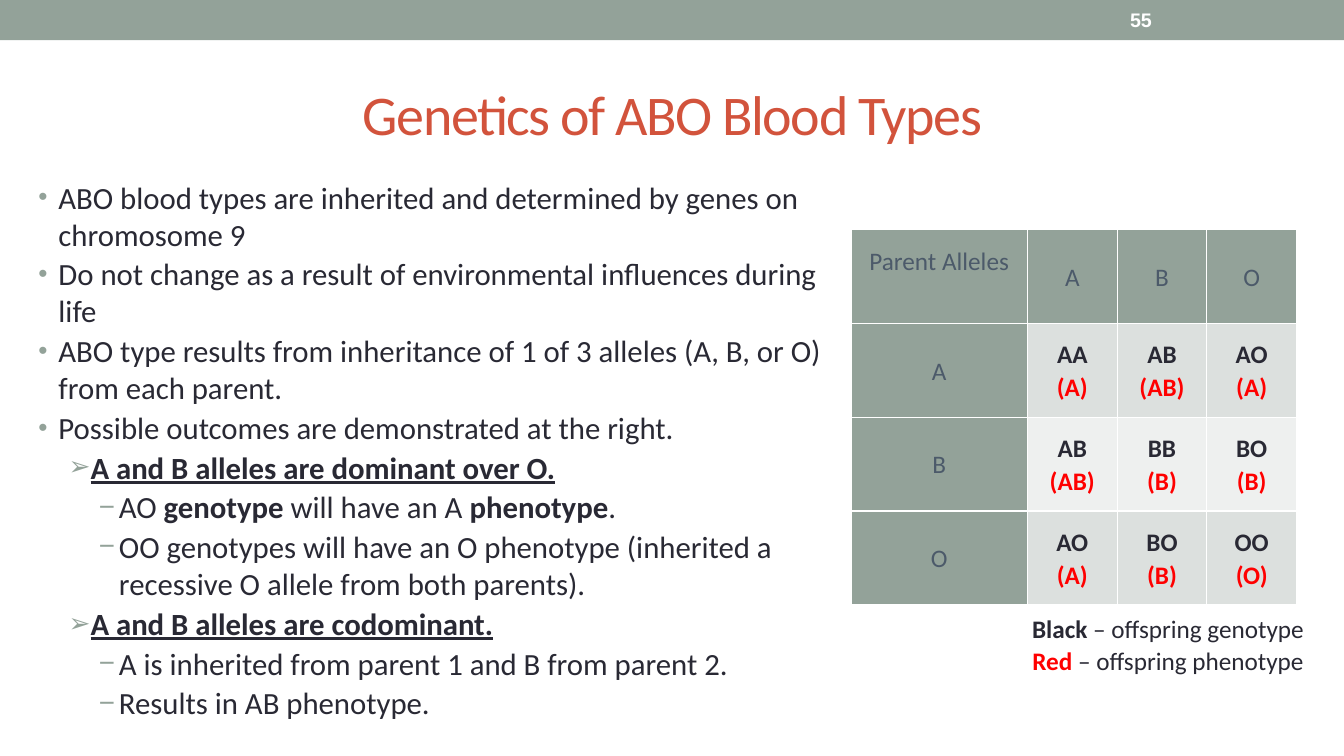
from lxml import etree
from pptx import Presentation
from pptx.dml.color import RGBColor
from pptx.enum.shapes import MSO_SHAPE
from pptx.enum.text import MSO_ANCHOR, MSO_AUTO_SIZE, PP_ALIGN
from pptx.oxml.ns import qn
from pptx.util import Inches, Pt

RECTANGLE = MSO_SHAPE.RECTANGLE
TOP, MIDDLE = MSO_ANCHOR.TOP, MSO_ANCHOR.MIDDLE
NO_AUTOFIT = MSO_AUTO_SIZE.NONE
LEFT, CENTER = PP_ALIGN.LEFT, PP_ALIGN.CENTER

SAGE = RGBColor(0x93, 0xA2, 0x99)
RUST = RGBColor(0xD2, 0x53, 0x3C)
INK = RGBColor(0x29, 0x29, 0x34)
SLATE = RGBColor(0x4C, 0x5A, 0x6A)
RED = RGBColor(0xFF, 0x00, 0x00)
WHITE = RGBColor(0xFF, 0xFF, 0xFF)
BANDS = [RGBColor(0xDC, 0xE0, 0xDE), RGBColor(0xEE, 0xF0, 0xEF)]

# Content
TITLE = "Genetics of ABO Blood Types"
SLIDE_NUMBER = "55"
# (level, [(text, bold), ...])
BODY = [
    (0, [("ABO blood types are inherited and determined by genes on chromosome 9", False)]),
    (0, [("Do not change as a result of environmental influences during life", False)]),
    (0, [("ABO type results from inheritance of 1 of 3 alleles (A, B, or O) from each parent.", False)]),
    (0, [("Possible outcomes are demonstrated at the right.", False)]),
    (1, [("A and B alleles are dominant over O.", True)]),
    (2, [("AO ", False), ("genotype", True), (" will have an A ", False),
         ("phenotype", True), (".", False)]),
    (2, [("OO genotypes will have an O phenotype (inherited a recessive O allele "
          "from both parents).", False)]),
    (1, [("A and B alleles are codominant.", True)]),
    (2, [("A is inherited from parent 1 and B from parent 2.", False)]),
    (2, [("Results in AB phenotype.", False)]),
]
BULLETS = [("•", 85), ("➢", 85), ("−", 90)]  # character and size percent by level
CORNER = "Parent Alleles"
ALLELES = ["A", "B", "O"]
LEGEND = [
    [("Black", True, INK), (" – offspring genotype", False, INK)],
    [("Red", True, RED), (" – offspring phenotype", False, INK)],
]


def place(shape, left, top, width, height):
    shape.left, shape.top = Inches(left), Inches(top)
    shape.width, shape.height = Inches(width), Inches(height)


def style(run, size, color, bold=False, name="Calibri"):
    run.font.name, run.font.size = name, Pt(size)
    run.font.bold, run.font.color.rgb = bold, color


def add_run(paragraph, text, *formatting):
    run = paragraph.add_run()
    run.text = text
    style(run, *formatting)
    return run


def paragraph_at(text_frame, index):
    return text_frame.add_paragraph() if index else text_frame.paragraphs[0]


def add_bullet(paragraph, level):
    character, percent = BULLETS[level]
    properties = paragraph._p.get_or_add_pPr()
    properties.set("marL", str(Inches(0.2 + 0.3 * level)))
    properties.set("indent", str(Inches(-0.2)))
    color = etree.SubElement(properties, qn("a:buClr"))
    etree.SubElement(color, qn("a:srgbClr"), val=str(SAGE))
    etree.SubElement(properties, qn("a:buSzPct"), val=str(percent * 1000))
    etree.SubElement(properties, qn("a:buFont"), typeface="Arial")
    etree.SubElement(properties, qn("a:buChar"), char=character)


def add_borders(cell):
    properties = cell._tc.get_or_add_tcPr()
    for side in ("L", "R", "T", "B"):
        line = etree.SubElement(properties, qn(f"a:ln{side}"), w=str(Pt(1)))
        fill = etree.SubElement(line, qn("a:solidFill"))
        etree.SubElement(fill, qn("a:srgbClr"), val=str(WHITE))


def fill_cell(cell, text, fill, colors, bold):
    add_borders(cell)
    cell.fill.solid()
    cell.fill.fore_color.rgb = fill
    cell.vertical_anchor = MIDDLE
    cell.margin_left = cell.margin_right = Inches(0.06)
    cell.margin_top = cell.margin_bottom = Inches(0.06)
    paragraph = cell.text_frame.paragraphs[0]
    paragraph.text = text
    paragraph.alignment, paragraph.line_spacing = CENTER, 1.07
    for run, color in zip(paragraph.runs, colors):
        style(run, 18, color, bold)


def offspring(first, second):
    genotype = "".join(sorted(first + second))
    phenotype = "".join(sorted(set(genotype) - {"O"})) or "O"
    return f"{genotype}\n({phenotype})"


presentation = Presentation()
presentation.slide_width, presentation.slide_height = Inches(13.33), Inches(7.5)
slide = presentation.slides.add_slide(presentation.slide_layouts[1])
shapes = slide.shapes

# Top band with slide number
band = shapes.add_shape(RECTANGLE, 0, 0, Inches(13.33), Inches(0.4))
band.shadow.inherit = False
band.fill.solid()
band.fill.fore_color.rgb = SAGE
band.line.fill.background()
number_box = shapes.add_textbox(Inches(11.11), Inches(0.02), Inches(1.56), Inches(0.36))
number_box.text_frame.word_wrap = True
number_box.text_frame.vertical_anchor = MIDDLE
add_run(number_box.text_frame.paragraphs[0], SLIDE_NUMBER, 14, WHITE, True, "Arial")

# Title
title = shapes.title
place(title, 0.67, 0.58, 12, 1.08)
title.text_frame.auto_size = NO_AUTOFIT
title.text_frame.vertical_anchor = MIDDLE
title.text_frame.text = TITLE
title_paragraph = title.text_frame.paragraphs[0]
title_paragraph.alignment = CENTER
style(title_paragraph.runs[0], 40, RUST)
title_paragraph.runs[0].font._element.set("spc", "-100")

# Bulleted list
body = slide.placeholders[1]
place(body, 0.28, 1.72, 8.15, 5.64)
body.text_frame.auto_size = NO_AUTOFIT
body.text_frame.vertical_anchor = TOP
for index, (level, parts) in enumerate(BODY):
    paragraph = paragraph_at(body.text_frame, index)
    paragraph.level, paragraph.alignment = level, LEFT
    paragraph.space_before = Pt(2 if index else 0)
    add_bullet(paragraph, level)
    for text, bold in parts:
        run = add_run(paragraph, text, 22, INK, bold)
        run.font.underline = level == 1

# Allele cross table
side = len(ALLELES) + 1
table = shapes.add_table(side, side, Inches(8.44), Inches(2.28),
                         Inches(4.43), Inches(3.73)).table
for index in range(side):
    table.columns[index].width = Inches(0.89 if index else 1.75)
    table.rows[index].height = Inches(0.93)
fill_cell(table.cell(0, 0), CORNER, SAGE, [SLATE], False)
table.cell(0, 0).margin_bottom = Inches(0.38)
for row, first in enumerate(ALLELES, 1):
    fill_cell(table.cell(0, row), first, SAGE, [SLATE], False)
    fill_cell(table.cell(row, 0), first, SAGE, [SLATE], False)
    for column, second in enumerate(ALLELES, 1):
        fill_cell(table.cell(row, column), offspring(first, second),
                  BANDS[(row - 1) % 2], [INK, RED], True)

# Legend
legend = shapes.add_textbox(Inches(10), Inches(6.01), Inches(3.17), Inches(0.75))
legend.text_frame.word_wrap = True
for index, parts in enumerate(LEGEND):
    paragraph = paragraph_at(legend.text_frame, index)
    paragraph.alignment, paragraph.line_spacing = CENTER, 1.07
    for text, bold, color in parts:
        add_run(paragraph, text, 18, color, bold)

presentation.save("out.pptx")
